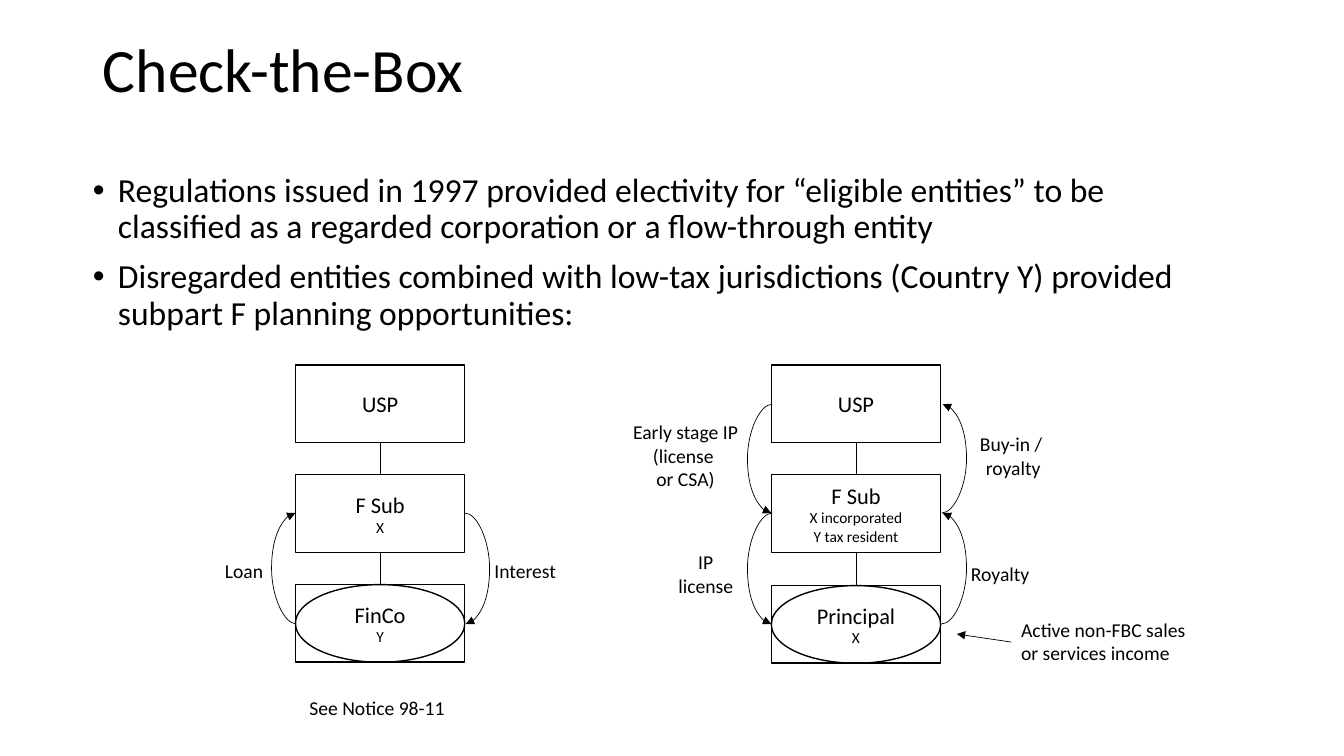
from dataclasses import dataclass

from lxml import etree
from pptx import Presentation
from pptx import util as u
from pptx.dml.color import RGBColor
from pptx.enum import shapes, text
from pptx.oxml.ns import qn

PX = 9144  # EMU per px: 100 px to the inch


@dataclass(frozen=True)
class Theme:
    font: str = "Calibri"
    ink: RGBColor = RGBColor(0, 0, 0)
    title: int = 44
    body: int = 24
    entity: int = 16
    label: int = 14
    detail: int = 11
    box_line: float = 1
    thin_line: float = 0.5


def write(tf, lines, theme, size, rest=None, align=text.PP_ALIGN.CENTER,
          spacing=None, before=None):
    """Write one paragraph per line; lines after the first may take size rest."""
    for i, line in enumerate(lines):
        p = tf.paragraphs[0] if i == 0 else tf.add_paragraph()
        p.alignment = align
        if spacing:
            p.line_spacing = spacing
        if before is not None:
            p.space_before = u.Pt(before)
        r = p.add_run()
        r.text = line
        r.font.name = theme.font
        r.font.size = u.Pt(rest if rest and i else size)
        r.font.color.rgb = theme.ink


class Diagram:
    BOX_W, BOX_H = 168, 77
    BULGE = 25

    def __init__(self, slide, theme):
        self.slide, self.theme = slide, theme

    def placeholder(self, index, box, lines, size, before=None):
        sp = self.slide.placeholders[index]
        sp.left, sp.top, sp.width, sp.height = (v * PX for v in box)
        tf = sp.text_frame
        tf.auto_size = text.MSO_AUTO_SIZE.NONE
        write(tf, lines, self.theme, size, align=text.PP_ALIGN.LEFT,
              spacing=0.9, before=before)
        return tf

    def bullets(self, box, lines):
        tf = self.placeholder(1, box, lines, self.theme.body, before=10)
        for p in tf.paragraphs:
            pPr = p._p.get_or_add_pPr()
            pPr.set("marL", str(25 * PX))
            pPr.set("indent", str(-25 * PX))
            etree.SubElement(pPr, qn("a:buChar"), char="•")

    def shape(self, kind, x, y, lines=()):
        sp = self.slide.shapes.add_shape(
            kind, x * PX, y * PX, self.BOX_W * PX, self.BOX_H * PX)
        sp.shadow.inherit = False
        sp.fill.background()
        sp.line.color.rgb = self.theme.ink
        sp.line.width = u.Pt(self.theme.box_line)
        sp.text_frame.vertical_anchor = text.MSO_ANCHOR.MIDDLE
        write(sp.text_frame, lines, self.theme, self.theme.entity, self.theme.detail)
        return sp

    def label(self, x, y, w, h, *lines, align=text.PP_ALIGN.CENTER):
        sp = self.slide.shapes.add_textbox(x * PX, y * PX, w * PX, h * PX)
        tf = sp.text_frame
        tf.word_wrap = True
        tf.auto_size = text.MSO_AUTO_SIZE.SHAPE_TO_FIT_TEXT
        write(tf, lines, self.theme, self.theme.label, align=align)

    def line(self, x1, y1, x2, y2, kind=shapes.MSO_CONNECTOR.STRAIGHT, arrow=True):
        c = self.slide.shapes.add_connector(kind, x1 * PX, y1 * PX, x2 * PX, y2 * PX)
        c.line.color.rgb = self.theme.ink
        c.line.width = u.Pt(self.theme.thin_line)
        if arrow:
            etree.SubElement(c.line._get_or_add_ln(), qn("a:tailEnd"), type="triangle")
        etree.SubElement(c._element.spPr, qn("a:effectLst"))
        return c

    def owns(self, parent, child):
        c = self.line(0, 0, 0, 0, arrow=False)
        c.begin_connect(parent, 2)
        c.end_connect(child, 0)

    def flow(self, x, side, y1, y2):
        """Curved arrow bulging left (side -1) or right (side 1) of x."""
        start, end = (x + 1, x) if side < 0 else (x, x + 1)
        c = self.line(start, y1, end, y2, shapes.MSO_CONNECTOR.CURVE)
        geom = c._element.spPr.find(qn("a:prstGeom"))
        guides = geom.find(qn("a:avLst"))
        # The bend is a share of the connector's width, which is 1 px
        etree.SubElement(guides, qn("a:gd"), name="adj1",
                         fmla=f"val {self.BULGE * 100000}")

    def structure(self, x, tops, entities):
        """Stack of boxes joined top to bottom; the last also holds an ellipse."""
        *corporations, disregarded = entities
        boxes = [self.shape(shapes.MSO_SHAPE.RECTANGLE, x, y, lines)
                 for y, lines in zip(tops, corporations)]
        boxes.append(self.shape(shapes.MSO_SHAPE.RECTANGLE, x, tops[-1]))
        self.shape(shapes.MSO_SHAPE.OVAL, x, tops[-1], disregarded)
        for parent, child in zip(boxes, boxes[1:]):
            self.owns(parent, child)


def main():
    prs = Presentation()
    prs.slide_width, prs.slide_height = 1333 * PX, 750 * PX
    theme = Theme()
    d = Diagram(prs.slides.add_slide(prs.slide_layouts[1]), theme)

    # Title and list
    d.placeholder(0, (92, 23, 1150, 97), ["Check-the-Box"], theme.title)
    d.bullets((82, 167, 1150, 194), [
        "Regulations issued in 1997 provided electivity for “eligible entities” "
        "to be classified as a regarded corporation or a flow-through entity",
        "Disregarded entities combined with low-tax jurisdictions (Country Y) "
        "provided subpart F planning opportunities:",
    ])

    # Entity structures
    finance_x, principal_x = 293, 765
    d.structure(finance_x, (362, 471, 580),
                [["USP"], ["F Sub", "X"], ["FinCo", "Y"]])
    d.structure(principal_x, (362, 471, 581),
                [["USP"], ["F Sub", "X incorporated", "Y tax resident"],
                 ["Principal", "X"]])

    # Flows between the middles of the boxes
    usp, sub, low = 401, 509, 619
    for x, side, y1, y2 in (
        (finance_x, -1, low, sub),
        (finance_x + d.BOX_W, 1, sub, low),
        (principal_x, -1, usp, sub),
        (principal_x, -1, sub, low),
        (principal_x + d.BOX_W + 1, 1, low, sub),
        (principal_x + d.BOX_W + 1, 1, sub, usp),
    ):
        d.flow(x, side, y1, y2)

    # Labels
    d.label(199, 550, 86, 34, "Loan")
    d.label(478, 550, 86, 34, "Interest")
    d.label(293, 686, 162, 34, "See Notice 98-11")
    d.label(612, 412, 136, 81, "Early stage IP", "(license ", "or CSA)")
    d.label(657, 541, 86, 57, "IP", "license")
    d.label(962, 424, 86, 57, "Buy-in / ", "royalty")
    d.label(949, 553, 86, 34, "Royalty")
    d.label(1003, 608, 194, 57, "Active non-FBC sales or services income",
            align=text.PP_ALIGN.LEFT)
    d.line(1003, 637, 949, 629)

    prs.save("out.pptx")


if __name__ == "__main__":
    main()
